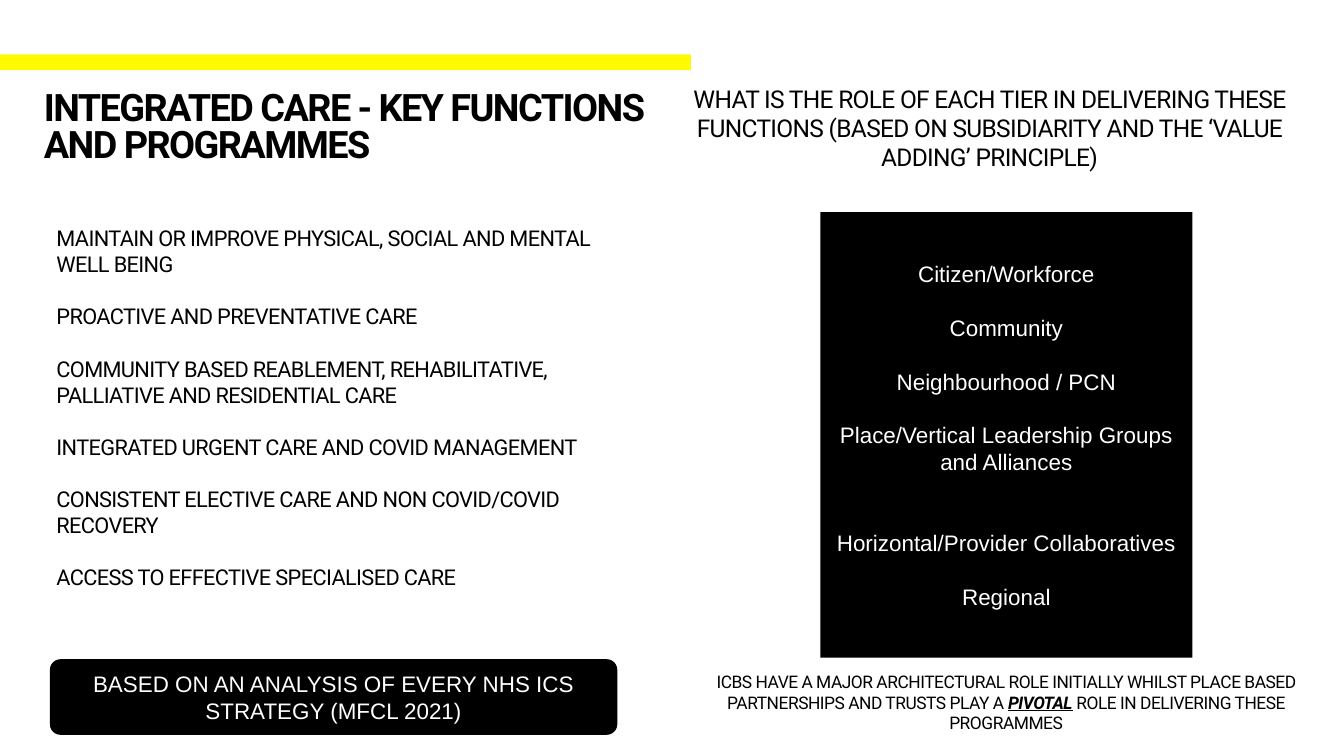
import pptx
import pptx.util
from pptx.dml.color import RGBColor
from pptx.enum.shapes import MSO_SHAPE
from pptx.enum.text import MSO_ANCHOR, PP_ALIGN

PX = 9144
SLIDE_SIZE = (2667, 1500)
INSET = 6
COLORS = {"accent": "FFFA00", "black": "000000", "white": "FFFFFF"}

ACCENT_BAR = (0, 108, 1371, 31)
TITLE = "INTEGRATED CARE - KEY FUNCTIONS AND PROGRAMMES"
FUNCTIONS = [
    "MAINTAIN OR IMPROVE PHYSICAL, SOCIAL AND MENTAL WELL BEING",
    "PROACTIVE AND PREVENTATIVE CARE",
    "COMMUNITY BASED REABLEMENT, REHABILITATIVE, PALLIATIVE AND RESIDENTIAL CARE",
    "INTEGRATED URGENT CARE AND COVID MANAGEMENT",
    "CONSISTENT ELECTIVE CARE AND NON COVID/COVID RECOVERY",
    "ACCESS TO EFFECTIVE SPECIALISED CARE",
]
QUESTION = (
    "WHAT IS THE ROLE OF EACH TIER IN DELIVERING THESE FUNCTIONS "
    "(BASED ON SUBSIDIARITY AND THE ‘VALUE ADDING’ PRINCIPLE)"
)
TIERS = [
    "Citizen/Workforce",
    "Community",
    "Neighbourhood / PCN",
    "Place/Vertical Leadership Groups and Alliances",
    "Horizontal/Provider Collaboratives",
    "Regional",
]
WIDE_GAP_TIER = 4
CONCLUSION = [
    "ICBS HAVE A MAJOR ARCHITECTURAL ROLE INITIALLY WHILST PLACE BASED "
    "PARTNERSHIPS AND TRUSTS PLAY A ",
    "PIVOTAL",
    " ROLE IN DELIVERING THESE PROGRAMMES",
]
BASIS = "BASED ON AN ANALYSIS OF EVERY NHS ICS STRATEGY (MFCL 2021)"

HEADING_STYLE = {"size": 54, "tracking": -220, "bold": True, "line": 0.8}
FUNCTION_STYLE = {"size": 31.1, "tracking": -90, "line": pptx.util.Pt(37.3)}
QUESTION_STYLE = {"size": 35, "tracking": -100, "align": PP_ALIGN.CENTER}
CONCLUSION_STYLE = {"size": 24.8, "tracking": -70, "align": PP_ALIGN.CENTER}
PANEL_STYLE = {
    "size": 32,
    "font": "Arial",
    "color": "white",
    "align": PP_ALIGN.CENTER,
    "line": pptx.util.Pt(38.4),
}


def emu(box):
    return [value * PX for value in box]


def add_filled_shape(slide, kind, box, color):
    shape = slide.shapes.add_shape(kind, *emu(box))
    shape.shadow.inherit = False
    shape.fill.solid()
    shape.fill.fore_color.rgb = RGBColor.from_string(COLORS[color])
    shape.line.fill.background()
    return shape


def write(shape, paragraphs, style, gaps=None, anchor=MSO_ANCHOR.TOP):
    frame = shape.text_frame
    frame.word_wrap = True
    frame.vertical_anchor = anchor
    frame.margin_left = frame.margin_right = INSET * PX
    frame.margin_top = frame.margin_bottom = INSET * PX
    for index, pieces in enumerate(paragraphs):
        paragraph = frame.paragraphs[0] if index == 0 else frame.add_paragraph()
        paragraph.alignment = style.get("align", PP_ALIGN.LEFT)
        if "line" in style:
            paragraph.line_spacing = style["line"]
        if index:
            paragraph.space_before = gaps[index]
        for piece in pieces:
            run = paragraph.add_run()
            run.text = piece
            run.font.name = style.get("font", "Roboto")
            run.font.size = pptx.util.Pt(style["size"])
            run.font.bold = style.get("bold", False)
            run.font.color.rgb = RGBColor.from_string(COLORS[style.get("color", "black")])
            if "tracking" in style:
                run.font._element.set("spc", str(style["tracking"]))


def add_text(slide, box, paragraphs, style, gaps=None):
    shape = slide.shapes.add_textbox(*emu(box))
    write(shape, paragraphs, style, gaps)
    return shape


def main():
    presentation = pptx.Presentation()
    presentation.slide_width, presentation.slide_height = emu(SLIDE_SIZE)
    slide = presentation.slides.add_slide(presentation.slide_layouts[6])

    add_filled_shape(slide, MSO_SHAPE.RECTANGLE, ACCENT_BAR, "accent")
    add_text(slide, (81, 178, 1251, 192), [[TITLE]], HEADING_STYLE)

    function_gaps = [FUNCTION_STYLE["line"]] * len(FUNCTIONS)
    add_text(slide, (106, 440, 1159, 1060), [[name] for name in FUNCTIONS],
             FUNCTION_STYLE, function_gaps)
    add_text(slide, (1308, 160, 1311, 277), [[QUESTION]], QUESTION_STYLE)

    tier_gaps = [PANEL_STYLE["line"]] * len(TIERS)
    tier_gaps[WIDE_GAP_TIER] *= 2
    tier_panel = add_filled_shape(slide, MSO_SHAPE.RECTANGLE, (1628, 421, 738, 884), "black")
    write(tier_panel, [[tier] for tier in TIERS], PANEL_STYLE, tier_gaps, MSO_ANCHOR.MIDDLE)

    conclusion = add_text(slide, (1341, 1325, 1311, 148), [CONCLUSION], CONCLUSION_STYLE)
    emphasis = conclusion.text_frame.paragraphs[0].runs[1].font
    emphasis.bold = emphasis.italic = emphasis.underline = True

    basis_panel = add_filled_shape(
        slide, MSO_SHAPE.ROUNDED_RECTANGLE, (99, 1308, 1126, 150), "black")
    basis_panel.adjustments[0] = 0.14
    write(basis_panel, [[BASIS]], PANEL_STYLE, anchor=MSO_ANCHOR.MIDDLE)

    presentation.save("out.pptx")


if __name__ == "__main__":
    main()
